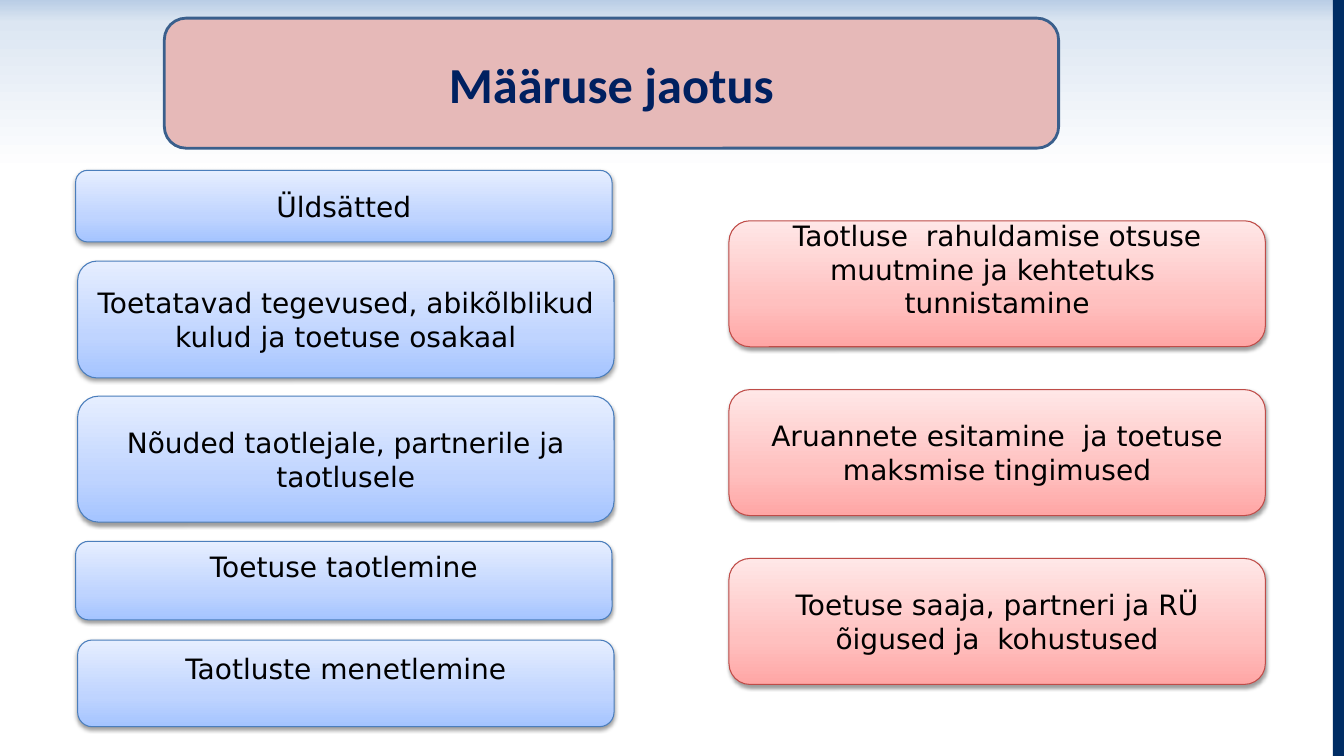
from lxml import etree
from pptx import Presentation
from pptx.dml.color import RGBColor
from pptx.enum.shapes import MSO_SHAPE as SHAPE
from pptx.enum.text import MSO_ANCHOR as ANCHOR, PP_ALIGN as ALIGN
from pptx.oxml.ns import qn
from pptx.util import Inches, Pt

BLACK = RGBColor(0x00, 0x00, 0x00)
NAVY = RGBColor(0x00, 0x2D, 0x64)
TITLE_TEXT = RGBColor(0x00, 0x20, 0x60)
TITLE_FILL = RGBColor(0xE6, 0xB9, 0xB8)
TITLE_LINE = RGBColor(0x3A, 0x5F, 0x8C)
BLUE_LINE = RGBColor(0x4B, 0x7E, 0xBC)
RED_LINE = RGBColor(0xBF, 0x4C, 0x48)
SKY = [(0, RGBColor(0xB9, 0xCD, 0xE5)), (13, RGBColor(0xDC, 0xE6, 0xF2)),
       (100, RGBColor(0xFF, 0xFF, 0xFF))]
BLUE = [(0, RGBColor(0xA4, 0xC4, 0xFF)), (35, RGBColor(0xBF, 0xD4, 0xFF)),
        (100, RGBColor(0xE6, 0xEE, 0xFF))]
RED = [(0, RGBColor(0xFF, 0xA6, 0xA5)), (35, RGBColor(0xFF, 0xC0, 0xBF)),
       (100, RGBColor(0xFF, 0xE7, 0xE7))]

BOX_WIDTH = 5.32
RED_LEFT, RED_TOP, RED_HEIGHT, RED_STEP = 7.23, 2.19, 1.25, 1.675
INSET, RAISED_INSET = 0.05, 0.34

BLUE_BOXES = [
    (0.75, 1.69, 0.71, "Üldsätted", INSET),
    (0.77, 2.59, 1.16, "Toetatavad tegevused, abikõlblikud kulud ja toetuse osakaal", INSET),
    (0.77, 3.93, 1.25, "Nõuded taotlejale, partnerile ja taotlusele", INSET),
    (0.75, 5.37, 0.78, "Toetuse taotlemine", RAISED_INSET),
    (0.77, 6.35, 0.86, "Taotluste menetlemine", RAISED_INSET),
]
RED_BOXES = [
    ("Taotluse  rahuldamise otsuse muutmine ja kehtetuks  tunnistamine", RAISED_INSET),
    ("Aruannete esitamine  ja toetuse maksmise tingimused", INSET),
    ("Toetuse saaja, partneri ja RÜ õigused ja  kohustused", INSET),
]


def add_panel(s, kind, left, top, width, height):
    sp = s.shapes.add_shape(kind, Inches(left), Inches(top), Inches(width), Inches(height))
    sp.shadow.inherit = False
    sp.line.fill.background()
    return sp


def set_solid(sp, color):
    sp.fill.solid()
    sp.fill.fore_color.rgb = color


def set_gradient(sp, stops, angle):
    sp.fill.gradient()
    sp.fill.gradient_angle = angle
    gs_list = sp._element.spPr.find(qn("a:gradFill")).find(qn("a:gsLst"))
    for gs in list(gs_list):
        gs_list.remove(gs)
    for position, color in stops:
        gs = etree.SubElement(gs_list, qn("a:gs"), pos=str(position * 1000))
        etree.SubElement(gs, qn("a:srgbClr"), val=str(color))


def set_line(sp, color, width):
    sp.line.color.rgb = color
    sp.line.width = Pt(width)


def add_shadow(sp):
    effects = sp._element.spPr.find(qn("a:effectLst"))
    shadow = etree.SubElement(effects, qn("a:outerShdw"), blurRad=str(Pt(3.1)),
                              dist=str(Pt(1.6)), dir="5400000", rotWithShape="0")
    color = etree.SubElement(shadow, qn("a:srgbClr"), val=str(BLACK))
    etree.SubElement(color, qn("a:alpha"), val="38000")


def set_text(sp, text, font, size, color, bold=False, bottom=INSET):
    tf = sp.text_frame
    tf.word_wrap = True
    tf.vertical_anchor = ANCHOR.MIDDLE
    tf.margin_bottom = Inches(bottom)
    p = tf.paragraphs[0]
    p.text = text
    p.alignment = ALIGN.CENTER
    p.font.name = font
    p.font.size = Pt(size)
    p.font.bold = bold
    p.font.color.rgb = color


def add_background(s):
    set_gradient(add_panel(s, SHAPE.RECTANGLE, 0, 0, 13.33, 1.7), SKY, 270)
    set_solid(add_panel(s, SHAPE.RECTANGLE, 13.22, -0.04, 0.12, 7.54), NAVY)


def add_title(s, text):
    sp = add_panel(s, SHAPE.ROUNDED_RECTANGLE, 1.63, 0.18, 8.87, 1.29)
    set_solid(sp, TITLE_FILL)
    set_line(sp, TITLE_LINE, 2)
    set_text(sp, text, "Calibri", 36, TITLE_TEXT, bold=True)


def add_box(s, left, top, height, text, bottom, stops, line):
    sp = add_panel(s, SHAPE.ROUNDED_RECTANGLE, left, top, BOX_WIDTH, height)
    set_gradient(sp, stops, 90)
    set_line(sp, line, 0.75)
    add_shadow(sp)
    set_text(sp, text, "DejaVu Sans", 20, BLACK, bottom=bottom)


def main():
    prs = Presentation()
    prs.slide_width, prs.slide_height = Inches(13.33), Inches(7.5)
    s = prs.slides.add_slide(prs.slide_layouts[6])
    add_background(s)
    add_title(s, "Määruse jaotus")
    for left, top, height, text, bottom in BLUE_BOXES:
        add_box(s, left, top, height, text, bottom, BLUE, BLUE_LINE)
    for i, (text, bottom) in enumerate(RED_BOXES):
        add_box(s, RED_LEFT, RED_TOP + i * RED_STEP, RED_HEIGHT, text, bottom, RED, RED_LINE)
    prs.save("out.pptx")


if __name__ == "__main__":
    main()
